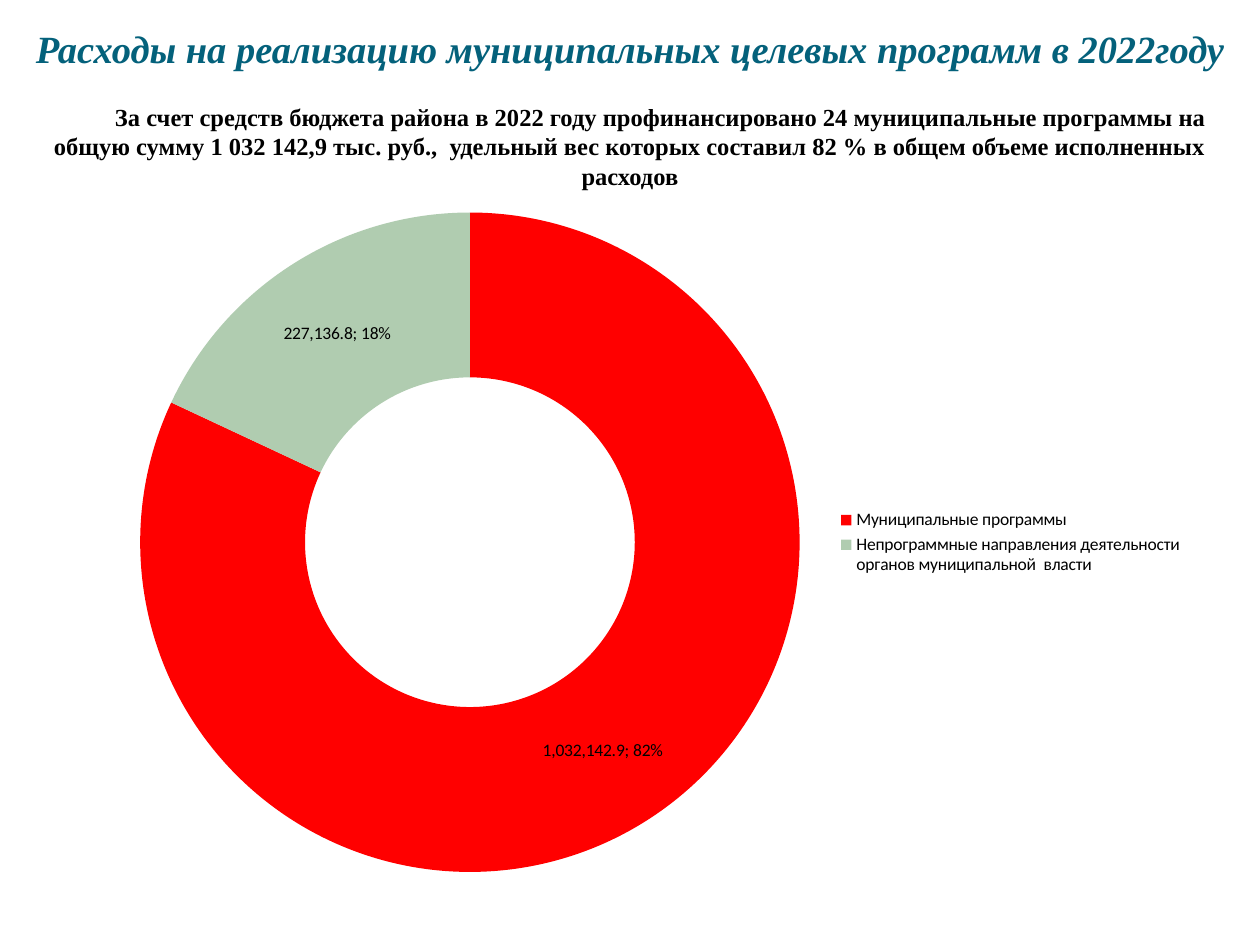
"""Build a slide on municipal programme spending with a doughnut chart."""
import lxml.etree
import pptx
import pptx.chart.data
import pptx.dml.color
import pptx.enum.chart
import pptx.enum.text
import pptx.oxml.ns
import pptx.util

WIDTH, HEIGHT = pptx.util.Inches(10), pptx.util.Inches(7.5)
COLORS = {"title": "04617B", "text": "000000", "programmes": "FF0000", "other": "B0CCB0"}
SPENDING = {
    "Муниципальные программы": (1032142.9, "programmes"),
    "Непрограммные направления деятельности органов муниципальной  власти": (227136.8, "other"),
}


def rgb(name):
    """Return the named colour."""
    return pptx.dml.color.RGBColor.from_string(COLORS[name])


def share_box(left, top, width, height):
    """Turn shares of the slide into a box of lengths."""
    return [round(share * side) for share, side in
            zip((left, top, width, height), (WIDTH, HEIGHT, WIDTH, HEIGHT))]


def format_font(font, size, color, name, bold=False, italic=False):
    """Set the look of a font."""
    font.size, font.name = pptx.util.Pt(size), name
    font.bold, font.italic = bold, italic
    font.color.rgb = rgb(color)


def write_text(shape, text, anchor, indent=0, **font_format):
    """Write one centred paragraph into a shape."""
    frame = shape.text_frame
    frame.word_wrap = True
    frame.auto_size = pptx.enum.text.MSO_AUTO_SIZE.NONE
    frame.vertical_anchor = anchor
    paragraph = frame.paragraphs[0]
    paragraph.alignment = pptx.enum.text.PP_ALIGN.CENTER
    if indent:
        properties = paragraph._p.get_or_add_pPr()
        properties.set("marL", "0")
        properties.set("indent", str(pptx.util.Inches(indent)))
    run = paragraph.add_run()
    run.text = text
    format_font(run.font, name="Times New Roman", **font_format)


def place_title(slide, box):
    """Place the slide title."""
    title = slide.shapes.title
    title.left, title.top, title.width, title.height = box
    write_text(title, "Расходы на реализацию муниципальных целевых программ в 2022году",
               pptx.enum.text.MSO_ANCHOR.MIDDLE,
               size=22, color="title", bold=True, italic=True)


def place_summary(slide, box):
    """Place the paragraph that sums up the spending."""
    write_text(slide.shapes.add_textbox(*box),
               "За счет средств бюджета района в 2022 году профинансировано 24 муниципальные "
               "программы на общую сумму 1 032 142,9 тыс. руб.,  удельный вес которых составил "
               "82 % в общем объеме исполненных расходов",
               pptx.enum.text.MSO_ANCHOR.TOP, indent=0.49,
               size=14, color="text", bold=True)


def place_chart(slide, box):
    """Place the doughnut of spending with its legend."""
    data = pptx.chart.data.CategoryChartData(number_format="#,##0.0")
    data.categories = list(SPENDING)
    amounts = [value for value, _ in SPENDING.values()]
    for number, values in enumerate(([], [], amounts), start=1):
        data.add_series(f"Series {number}", values)
    chart = slide.shapes.add_chart(
        pptx.enum.chart.XL_CHART_TYPE.DOUGHNUT, *box, data).chart
    format_font(chart.font, 10, "text", "Calibri")
    chart.has_title = False
    chart.has_legend = True
    chart.legend.position = pptx.enum.chart.XL_LEGEND_POSITION.RIGHT
    chart.legend.include_in_layout = False
    plot = chart.plots[0]
    plot.vary_by_categories = True
    spending_series = plot.series[2]
    for index, (_, color) in enumerate(SPENDING.values()):
        fill = spending_series.points[index].format.fill
        fill.solid()
        fill.fore_color.rgb = rgb(color)
    labels = spending_series.data_labels
    labels.show_value = labels.show_percentage = True
    labels.number_format, labels.number_format_is_linked = "#,##0.0", True
    format_font(labels.font, 10, "text", "Calibri")
    separator = lxml.etree.Element(pptx.oxml.ns.qn("c:separator"))
    separator.text = "; "
    labels._element.find(pptx.oxml.ns.qn("c:showBubbleSize")).addnext(separator)
    plot._element.find(pptx.oxml.ns.qn("c:holeSize")).set("val", "50")


def main():
    """Build and save the presentation."""
    presentation = pptx.Presentation()
    presentation.slide_width, presentation.slide_height = WIDTH, HEIGHT
    slide = presentation.slides.add_slide(presentation.slide_layouts[5])
    place_title(slide, share_box(0, 0.0013, 1, 0.1))
    place_summary(slide, share_box(0, 0.1013, 1, 0.076))
    place_chart(slide, share_box(0.083, 0.2065, 0.866, 0.7347))
    presentation.save("out.pptx")


if __name__ == "__main__":
    main()
